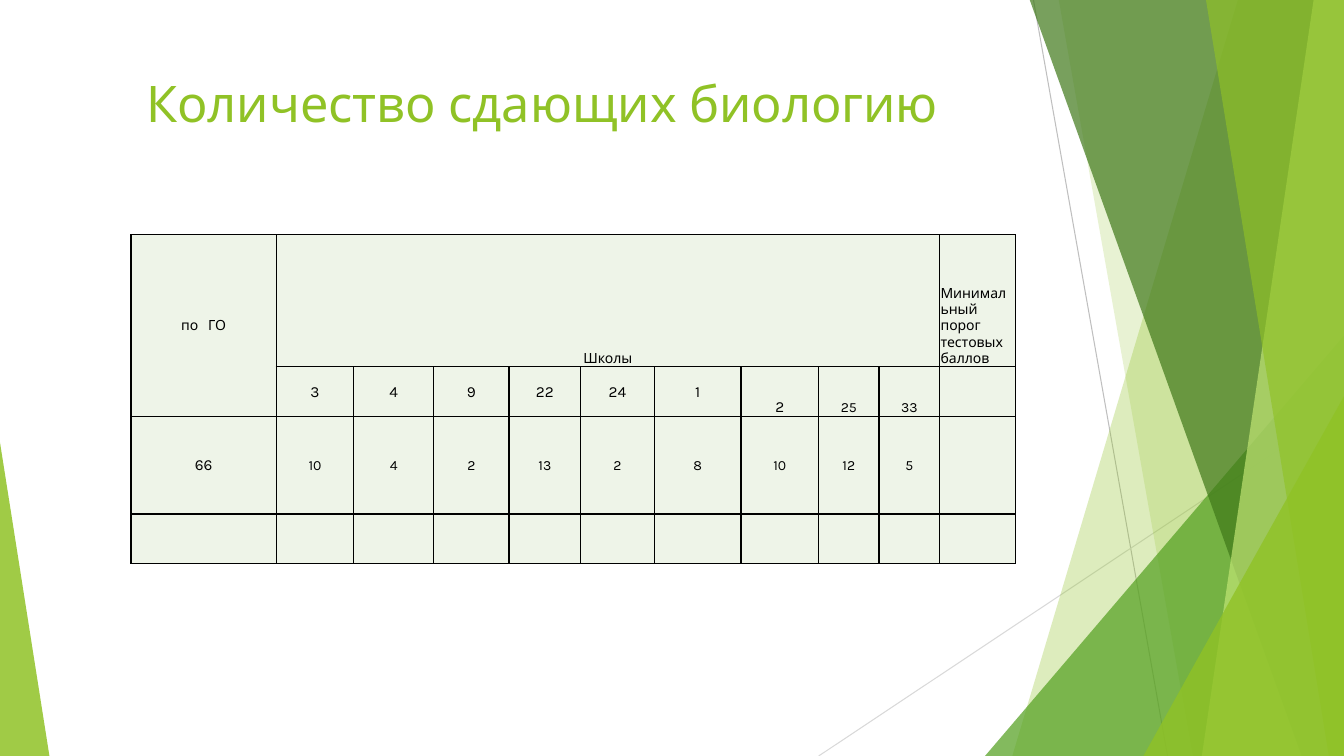
from dataclasses import dataclass

from lxml.etree import SubElement
from pptx import Presentation
from pptx.dml.color import RGBColor
from pptx.enum.shapes import MSO_CONNECTOR, MSO_SHAPE
from pptx.enum.text import MSO_ANCHOR, PP_ALIGN
from pptx.oxml import parse_xml
from pptx.oxml.ns import nsdecls, qn
from pptx.util import Inches, Pt


@dataclass(frozen=True)
class Theme:
    font: str = "Karla"
    lime: str = "90C226"
    green: str = "54A021"
    dark_green: str = "3F7819"
    pale_lime: str = "C0E474"
    steep_line: str = "BFBFBF"
    flat_line: str = "D9D9D9"
    cell_fill: str = "EEF4E8"
    ink: str = "000000"
    title_size: int = 36
    number_size: int = 11
    table_size: int = 10


theme = Theme()


def paint(shape, color, opacity):
    """Give the shape a see-through fill (opacity in percent) and no outline."""
    shape.shadow.inherit = False
    shape.line.fill.background()
    shape.fill.solid()
    shape.fill.fore_color.rgb = RGBColor.from_string(color)
    color_element = shape.fill._xPr.find(qn("a:solidFill"))[0]
    SubElement(color_element, qn("a:alpha"), val=str(opacity * 1000))


def add_border(cell, side):
    cell._tc.get_or_add_tcPr().append(parse_xml(
        f'<a:{side} {nsdecls("a")} w="{Pt(1)}"><a:solidFill>'
        f'<a:srgbClr val="{theme.ink}"/></a:solidFill></a:{side}>'))


presentation = Presentation()
presentation.slide_width = Inches(13.33)
presentation.slide_height = Inches(7.5)
slide = presentation.slides.add_slide(presentation.slide_layouts[6])
shapes = slide.shapes

# Thin lines behind the facets
for x1, y1, x2, y2, color in [
    (10.25, 0, 11.58, 7.5, theme.steep_line),
    (13.33, 4.03, 8.12, 7.5, theme.flat_line),
]:
    line = shapes.add_connector(
        MSO_CONNECTOR.STRAIGHT, Inches(x1), Inches(y1), Inches(x2), Inches(y2))
    line.line.color.rgb = RGBColor.from_string(color)
    line.line.width = Pt(0.75)
    SubElement(line._element.spPr, qn("a:effectLst"))

# Facets from back to front: a band runs from its top left to its bottom left
# corner and out to the right edge; a triangle has a box and a tip position
facets = [
    ("band", (12.28, 10.04), theme.lime, 30),
    ("band", (10.5, 11.83), theme.lime, 20),
    ("triangle", (9.77, 3.33, 3.56, 4.17, 1), theme.green, 72),
    ("band", (10.21, 12.91), theme.dark_green, 70),
    ("band", (13.03, 11.92), theme.pale_lime, 70),
    ("band", (11.96, 13.18), theme.lime, 65),
    ("triangle", (11.34, 3.93, 1.99, 3.57, 1), theme.lime, 80),
    ("triangle", (0, 4.39, 0.49, 3.11, 0), theme.lime, 85),
]
top, bottom, right = Inches(-0.01), Inches(7.5), Inches(13.33)
for kind, geometry, color, opacity in facets:
    if kind == "band":
        top_left, bottom_left = map(Inches, geometry)
        builder = shapes.build_freeform(top_left, top)
        builder.add_line_segments(
            [(right, top), (right, bottom), (bottom_left, bottom)], close=True)
        facet = builder.convert_to_shape()
    else:
        *box, tip = geometry
        facet = shapes.add_shape(MSO_SHAPE.ISOSCELES_TRIANGLE, *map(Inches, box))
        facet.adjustments[0] = tip
    paint(facet, color, opacity)

# Title
title = shapes.add_textbox(Inches(0.74), Inches(0.67), Inches(9.4), Inches(1.44))
title.text_frame.word_wrap = True
paragraph = title.text_frame.paragraphs[0]
paragraph.text = "Количество сдающих биологию "
paragraph.alignment = PP_ALIGN.CENTER
paragraph.font.name = theme.font
paragraph.font.size = Pt(theme.title_size)
paragraph.font.color.rgb = RGBColor.from_string(theme.lime)

# Table
column_widths = [1.44, 0.77, 0.79, 0.75, 0.71, 0.73, 0.86, 0.77, 0.6, 0.6, 0.75]
row_heights = [1.31, 0.49, 0.97, 0.49]
rows = [
    ["по   ГО", "Школы"] + [""] * 8 + ["Минимальный порог тестовых баллов"],
    ["", "3", "4", "9", "22", "24", "1", "2", "25", "33", ""],
    ["66", "10", "4", "2", "13", "2", "8", "10", "12", "5", ""],
    [""] * 11,
]
bottom_cells = {(0, 1), (0, 10), (1, 7), (1, 8), (1, 9)}
large_cells = {(1, column) for column in range(1, 8)} | {(2, 0)}

frame = shapes.add_table(
    len(rows), len(column_widths), Inches(1.3), Inches(2.33),
    Inches(sum(column_widths)), Inches(sum(row_heights)))
table = frame.table
table.first_row = False
table.horz_banding = False
for column, width in zip(table.columns, column_widths):
    column.width = Inches(width)
for row, height in zip(table.rows, row_heights):
    row.height = Inches(height)

for row_index, texts in enumerate(rows):
    for column_index, text in enumerate(texts):
        position = row_index, column_index
        cell = table.cell(*position)
        cell.margin_left = cell.margin_right = cell.margin_top = Inches(0.01)
        cell.margin_bottom = 0
        at_bottom = position in bottom_cells
        cell.vertical_anchor = MSO_ANCHOR.BOTTOM if at_bottom else MSO_ANCHOR.MIDDLE
        for side in ("lnL", "lnR", "lnT", "lnB"):
            add_border(cell, side)
        cell.fill.solid()
        cell.fill.fore_color.rgb = RGBColor.from_string(theme.cell_fill)
        paragraph = cell.text_frame.paragraphs[0]
        paragraph.text = text
        paragraph.alignment = PP_ALIGN.LEFT if position == (0, 10) else PP_ALIGN.CENTER
        size = theme.number_size if position in large_cells else theme.table_size
        paragraph.font.name = theme.font
        paragraph.font.size = Pt(size)
        paragraph.font.color.rgb = RGBColor.from_string(theme.ink)

table.cell(0, 0).merge(table.cell(1, 0))
table.cell(0, 1).merge(table.cell(0, 9))

presentation.save("out.pptx")
